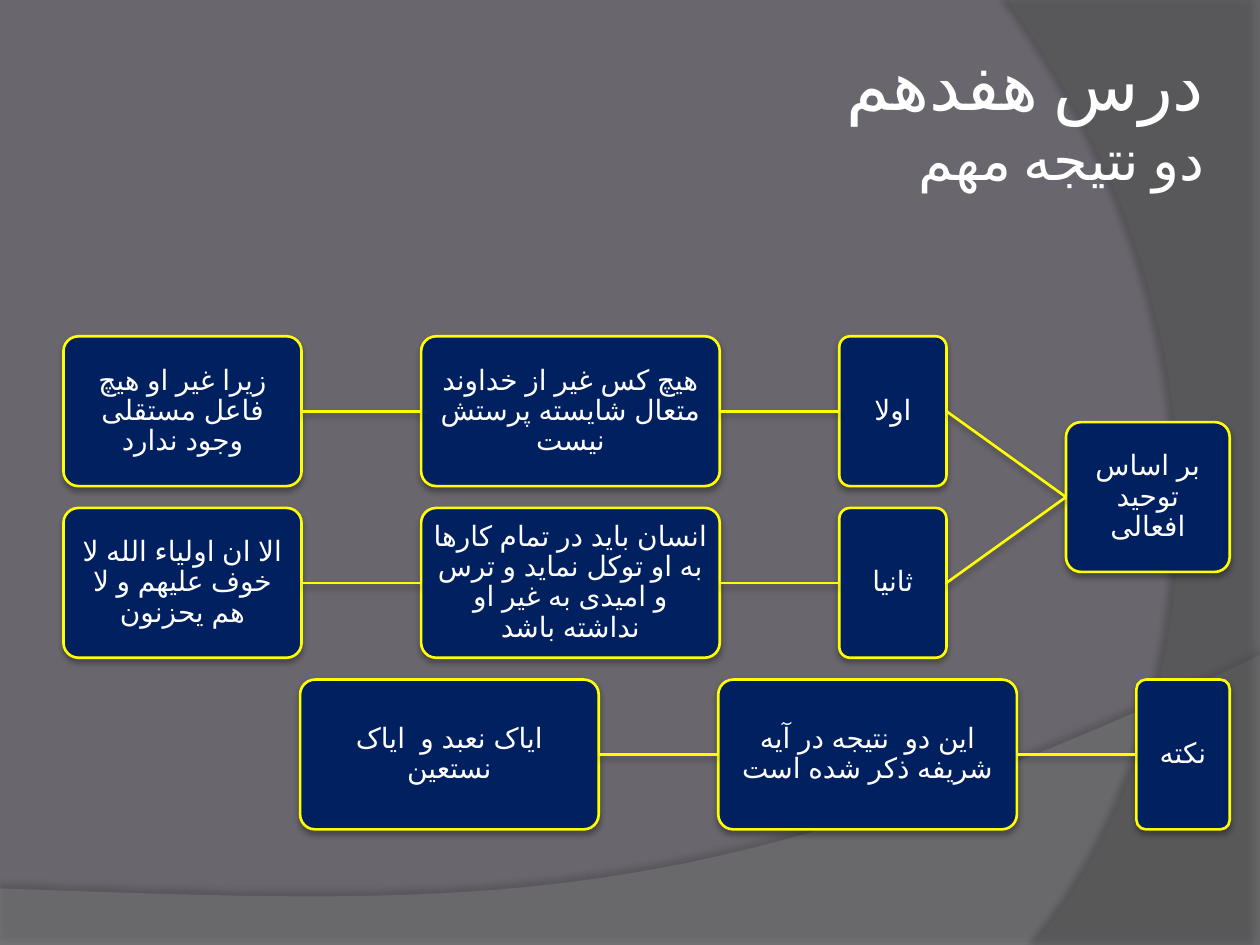
"""Builds a right-to-left slide with three chains of linked boxes."""
from dataclasses import dataclass

from lxml.etree import SubElement
from pptx import Presentation
from pptx.dml.color import RGBColor
from pptx.enum.lang import MSO_LANGUAGE_ID as Language
from pptx.enum.shapes import MSO_CONNECTOR, MSO_SHAPE
from pptx.enum.text import MSO_ANCHOR, MSO_AUTO_SIZE, PP_ALIGN
from pptx.oxml.ns import qn
from pptx.util import Cm, Pt

BACKDROP = RGBColor(0x69, 0x67, 0x6D)
LOW_WAVE = RGBColor(0x7F, 0x7F, 0x7F)
SIDE_WAVE = RGBColor(0x5E, 0x5E, 0x5E)
NAVY = RGBColor(0x00, 0x20, 0x60)
YELLOW = RGBColor(0xFF, 0xFF, 0x00)
WHITE = RGBColor(0xFF, 0xFF, 0xFF)

WIDTH, HEIGHT = 25.4, 19.05
RIGHT_EDGE = 24.79
BOX_HEIGHT, ROW_PITCH, FIRST_ROW = 3.02, 3.46, 6.78
GAP = 2.41
ROOT_WIDTH, NARROW, WIDE, MEDIUM, NOTE_WIDTH = 3.3, 2.16, 6.02, 4.8, 1.88

BOX_FRAME = {"word_wrap": True, "vertical_anchor": MSO_ANCHOR.MIDDLE,
             "margin_left": Cm(0.11), "margin_right": Cm(0.11),
             "margin_top": Cm(0.11), "margin_bottom": Cm(0.11)}
TITLE_FRAME = BOX_FRAME | {"auto_size": MSO_AUTO_SIZE.NONE,
                           "margin_left": Cm(0.13), "margin_right": Cm(0.13),
                           "margin_top": Cm(0.13), "margin_bottom": Cm(0.13)}
BOX_PARAGRAPH = {"alignment": PP_ALIGN.CENTER, "line_spacing": 0.9}
TITLE_PARAGRAPH = {"alignment": PP_ALIGN.RIGHT}


@dataclass(frozen=True)
class Shadow:
    opacity: int
    blur: float
    distance: float
    angle: int


@dataclass(frozen=True)
class Box:
    text: str
    width: float


@dataclass(frozen=True)
class Wave:
    corners: list
    curve: list
    color: RGBColor
    opacity: int
    shadow: Shadow


BOX_SHADOW = Shadow(32, 3.5, 2.2, 90)

WAVES = [
    Wave([(0, 17.91), (0, HEIGHT), (WIDTH, HEIGHT)],
         [(WIDTH, 13.21), (14.2, 18.52), (9.93, 18.26), (0, 17.91)],
         LOW_WAVE, 45, Shadow(35, 4, 3.5, 270)),
    Wave([(WIDTH, 0), (WIDTH, HEIGHT)],
         [(20.85, HEIGHT), (23.75, 15.72), (25.86, 7.62), (20.32, 0)],
         SIDE_WAVE, 40, Shadow(45, 4, 4, 180)),
]

ROOT = Box("بر اساس توحید افعالی", ROOT_WIDTH)
RESULTS = [
    [Box("اولا", NARROW),
     Box("هیچ کس غیر از خداوند متعال شایسته پرستش نیست", WIDE),
     Box("زیرا غیر او هیچ فاعل مستقلی وجود ندارد", MEDIUM)],
    [Box("ثانیا", NARROW),
     Box("انسان باید در تمام کارها به او توکل نماید و ترس و امیدی به غیر او نداشته باشد", WIDE),
     Box("الا ان اولیاء الله لا خوف علیهم و لا هم یحزنون", MEDIUM)],
]
NOTE = [Box("نکته", NOTE_WIDTH),
        Box("این دو  نتیجه در آیه شریفه ذکر شده است", WIDE),
        Box("ایاک نعبد و  ایاک نستعین", WIDE)]


def apply(target, values: dict) -> None:
    for name, value in values.items():
        setattr(target, name, value)


def add_shadow(effects, shadow: Shadow) -> None:
    outer = SubElement(effects, qn("a:outerShdw"), blurRad=str(Pt(shadow.blur)),
                       dist=str(Pt(shadow.distance)), dir=str(shadow.angle * 60000),
                       algn="ctr", rotWithShape="0")
    black = SubElement(outer, qn("a:srgbClr"), val="000000")
    SubElement(black, qn("a:alpha"), val=str(shadow.opacity * 1000))


def shade_shape(shape, shadow: Shadow) -> None:
    shape.shadow.inherit = False
    add_shadow(shape._element.spPr.find(qn("a:effectLst")), shadow)


def write_run(paragraph, text: str, size: float, font: str) -> None:
    run = paragraph.add_run()
    run.text = text
    apply(run.font, {"size": Pt(size), "name": font, "language_id": Language.FARSI})
    run.font.color.rgb = WHITE
    SubElement(run._r.get_or_add_rPr(), qn("a:cs"), typeface=font)


def start_paragraph(frame, frame_format: dict, paragraph_format: dict):
    apply(frame, frame_format)
    paragraph = frame.paragraphs[0]
    apply(paragraph, paragraph_format)
    paragraph._p.get_or_add_pPr().set("rtl", "1")
    return paragraph


def bezier(points: list, steps: int = 40) -> list:
    def at(t: float) -> tuple:
        weights = ((1 - t) ** 3, 3 * t * (1 - t) ** 2, 3 * t * t * (1 - t), t ** 3)
        return tuple(sum(w * p[axis] for w, p in zip(weights, points)) for axis in (0, 1))
    return [at(step / steps) for step in range(steps + 1)]


def draw_wave(shapes, wave: Wave) -> None:
    outline = [(Cm(x), Cm(y)) for x, y in wave.corners + bezier(wave.curve)]
    builder = shapes.build_freeform(*outline[0])
    builder.add_line_segments(outline[1:], close=True)
    shape = builder.convert_to_shape()
    shape.fill.solid()
    shape.fill.fore_color.rgb = wave.color
    color = shape._element.spPr.find(qn("a:solidFill")).find(qn("a:srgbClr"))
    SubElement(color, qn("a:alpha"), val=str(wave.opacity * 1000))
    shape.line.fill.background()
    shade_shape(shape, wave.shadow)


def draw_box(shapes, box: Box, right: float, top: float):
    shape = shapes.add_shape(MSO_SHAPE.ROUNDED_RECTANGLE, Cm(right - box.width), Cm(top),
                             Cm(box.width), Cm(BOX_HEIGHT))
    shape.adjustments[0] = 0.1
    shape.fill.solid()
    shape.fill.fore_color.rgb = NAVY
    shape.line.color.rgb = YELLOW
    shape.line.width = Pt(1.5)
    shade_shape(shape, BOX_SHADOW)
    paragraph = start_paragraph(shape.text_frame, BOX_FRAME, BOX_PARAGRAPH)
    write_run(paragraph, box.text, 16, "Arial")
    return shape


def link(shapes, source, target) -> None:
    connector = shapes.add_connector(MSO_CONNECTOR.STRAIGHT, 0, 0, 0, 0)
    connector.begin_connect(source, 1)
    connector.end_connect(target, 3)
    connector.line.color.rgb = YELLOW
    connector.line.width = Pt(1.5)
    add_shadow(SubElement(connector._element.spPr, qn("a:effectLst")), BOX_SHADOW)


def draw_chain(shapes, boxes: list, right: float, top: float, parent=None) -> None:
    for box in boxes:
        shape = draw_box(shapes, box, right, top)
        if parent is not None:
            link(shapes, parent, shape)
        parent = shape
        right -= box.width + GAP


def write_title(title) -> None:
    apply(title, {"left": Cm(3.66), "top": Cm(0.76), "width": Cm(20.75), "height": Cm(3.18)})
    paragraph = start_paragraph(title.text_frame, TITLE_FRAME, TITLE_PARAGRAPH)
    write_run(paragraph, "درس هفدهم", 40, "Cabin")
    paragraph.add_line_break()
    write_run(paragraph, "دو نتیجه مهم", 32, "Cabin")


def main() -> None:
    deck = Presentation()
    apply(deck, {"slide_width": Cm(WIDTH), "slide_height": Cm(HEIGHT)})
    slide = deck.slides.add_slide(deck.slide_layouts[5])
    slide.background.fill.solid()
    slide.background.fill.fore_color.rgb = BACKDROP
    shapes = slide.shapes
    for wave in WAVES:
        draw_wave(shapes, wave)
    title = shapes.title
    shapes._spTree.append(title._element)
    write_title(title)

    root = draw_box(shapes, ROOT, RIGHT_EDGE, FIRST_ROW + ROW_PITCH / 2)
    for row, boxes in enumerate(RESULTS):
        draw_chain(shapes, boxes, RIGHT_EDGE - ROOT_WIDTH - GAP, FIRST_ROW + row * ROW_PITCH, root)
    draw_chain(shapes, NOTE, RIGHT_EDGE, FIRST_ROW + len(RESULTS) * ROW_PITCH)
    deck.save("out.pptx")


if __name__ == "__main__":
    main()
